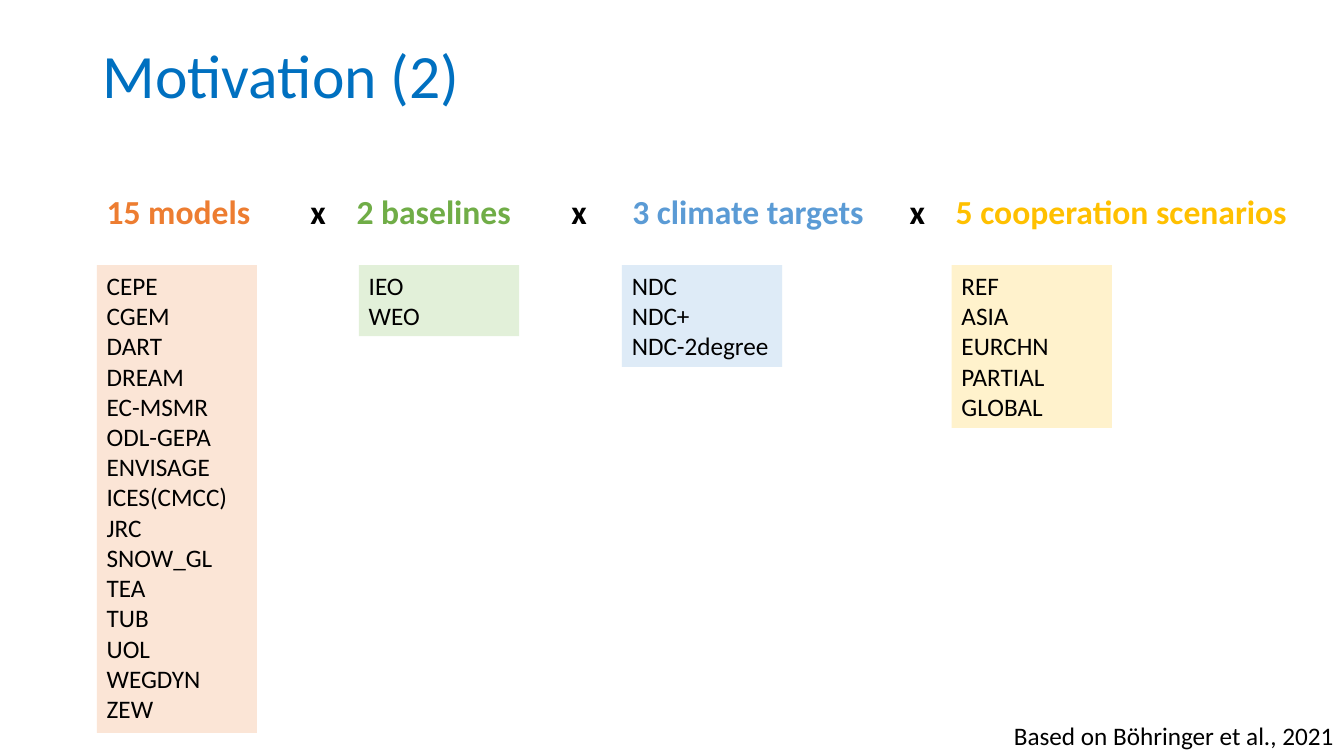
from lxml import etree
from pptx import Presentation
from pptx.dml.color import RGBColor
from pptx.enum import shapes, text
from pptx.oxml import ns
from pptx.util import Pt

COLORS = {
    "title": "0070C0", "black": "000000",
    "models": "ED7D31", "baselines": "70AD47",
    "targets": "5B9BD5", "scenarios": "FFC000",
    "models_fill": "FBE5D6", "baselines_fill": "E2F0D9",
    "targets_fill": "DEEBF7", "scenarios_fill": "FFF2CC",
}


def format_text(text_frame, size, color="black"):
    text_frame.word_wrap = True
    text_frame.vertical_anchor = text.MSO_ANCHOR.TOP
    for paragraph in text_frame.paragraphs:
        paragraph.alignment = text.PP_ALIGN.LEFT
        for run in paragraph.runs:
            run.font.name = "Calibri"
            run.font.size = Pt(size)
            run.font.color.rgb = RGBColor.from_string(COLORS[color])


presentation = Presentation()
presentation.slide_width = Pt(960)
presentation.slide_height = Pt(540)
slide = presentation.slides.add_slide(presentation.slide_layouts[5])

title = slide.shapes.title
title.left, title.top, title.width, title.height = Pt(66), Pt(28.8), Pt(828), Pt(104.4)
title.text_frame.text = "Motivation (2)"
title.text_frame.auto_size = text.MSO_AUTO_SIZE.NONE
title.text_frame.paragraphs[0].line_spacing = 0.9
format_text(title.text_frame, 44, "title")

formula = slide.shapes.add_textbox(Pt(69.1), Pt(132.5), Pt(900), Pt(36))
formula_parts = [
    ("15 models", "models"), ("\tx\t", "black"),
    ("2 baselines", "baselines"), ("\tx\t", "black"),
    ("3 climate targets", "targets"), ("\tx\t", "black"),
    ("5 cooperation scenarios", "scenarios"),
]
formula_paragraph = formula.text_frame.paragraphs[0]
for wording, color in formula_parts:
    run = formula_paragraph.add_run()
    run.text = wording
format_text(formula.text_frame, 24)
for run, (wording, color) in zip(formula_paragraph.runs, formula_parts):
    run.font.bold = True
    run.font.color.rgb = RGBColor.from_string(COLORS[color])

tab_list = etree.SubElement(formula_paragraph._p.get_or_add_pPr(), ns.qn("a:tabLst"))
for position in (145.5, 178.5, 332, 375.5, 573.5, 606.5):
    etree.SubElement(tab_list, ns.qn("a:tab"), pos=str(Pt(position)), algn="l")

columns = [
    ("models_fill", 69.1, ["CEPE", "CGEM", "DART", "DREAM", "EC-MSMR", "ODL-GEPA",
                           "ENVISAGE", "ICES(CMCC)", "JRC", "SNOW_GL", "TEA", "TUB",
                           "UOL", "WEGDYN", "ZEW"]),
    ("baselines_fill", 256.3, ["IEO", "WEO"]),
    ("targets_fill", 444.2, ["NDC", "NDC+", "NDC-2degree"]),
    ("scenarios_fill", 679.7, ["REF", "ASIA", "EURCHN", "PARTIAL", "GLOBAL"]),
]
for fill, left, entries in columns:
    column = slide.shapes.add_shape(
        shapes.MSO_SHAPE.RECTANGLE,
        Pt(left), Pt(189.4), Pt(114.5), Pt(7.2 + 21.8 * len(entries)))
    column.shadow.inherit = False
    column.fill.solid()
    column.fill.fore_color.rgb = RGBColor.from_string(COLORS[fill])
    column.line.fill.background()
    column.text_frame.text = "\n".join(entries)
    format_text(column.text_frame, 18)

source_note = slide.shapes.add_textbox(Pt(717.1), Pt(511.2), Pt(298.8), Pt(28.8))
source_note.text_frame.text = "Based on Böhringer et al., 2021"
format_text(source_note.text_frame, 18)

presentation.save("out.pptx")
